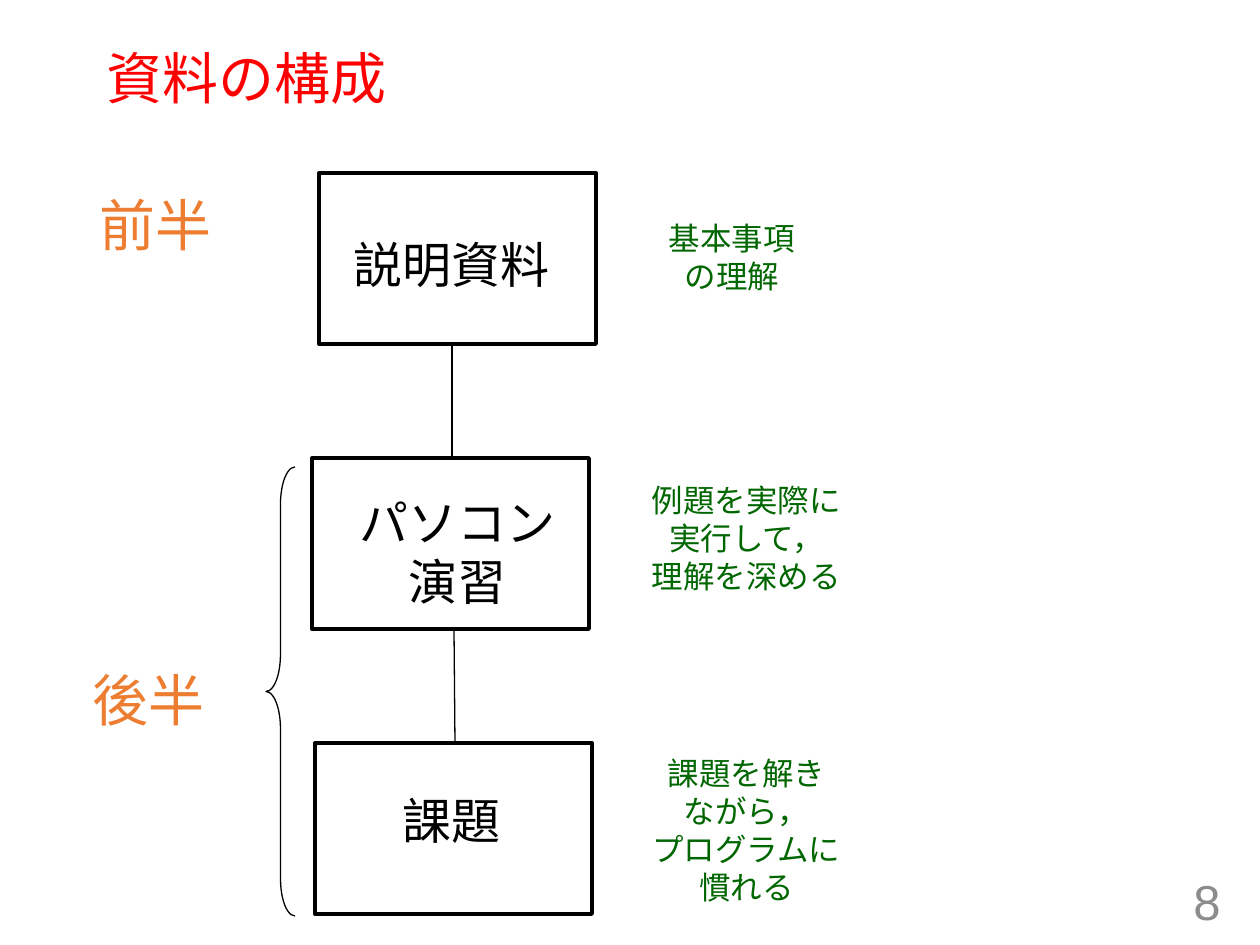
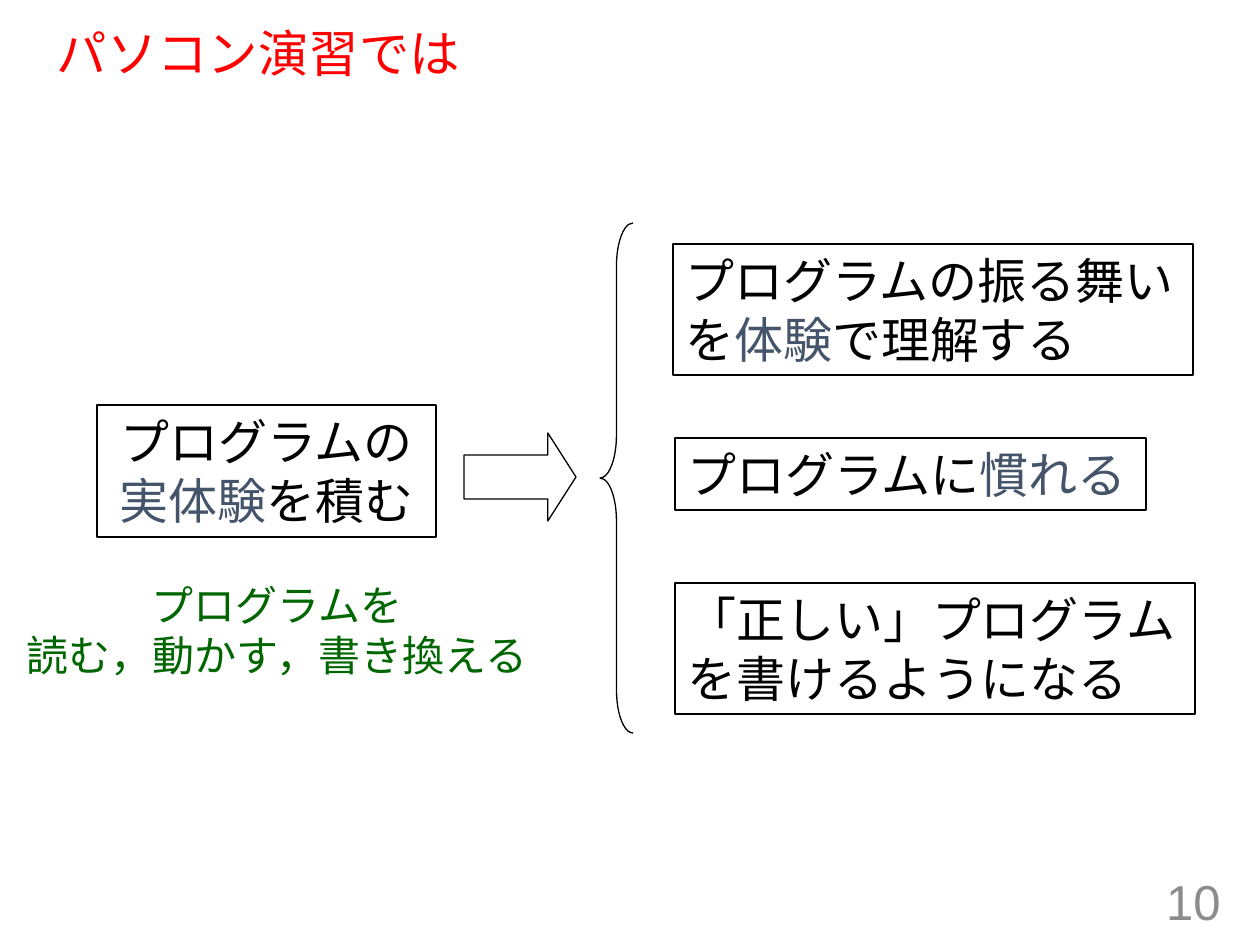
"""Build two slides on how the course material and the PC exercises are laid out."""
import dataclasses

import pptx
import pptx.dml.color
import pptx.enum.shapes
import pptx.enum.text
import pptx.oxml.ns
import pptx.util
from lxml import etree

SHAPE = pptx.enum.shapes.MSO_SHAPE
ALIGN = pptx.enum.text.PP_ALIGN
ANCHOR = pptx.enum.text.MSO_ANCHOR


@dataclasses.dataclass(frozen=True)
class Theme:
    """Hold the colours, fonts and sizes that the slides share."""
    head: str = "FF0000"
    ink: str = "000000"
    half: str = "ED7D31"
    note: str = "006600"
    key: str = "44546A"
    page: str = "8C8C8C"
    head_font: str = "Arial"
    body_font: str = "Calibri"
    big: float = 32
    mid: float = 28
    sub: float = 24
    small: float = 18
    thick: float = 2.25
    thin: float = 0.75


THEME = Theme()
PX = 126
PAGE_BOX = (949, 876, 284, 50)

PLAN = {
    "title": ("資料の構成", (94, 28, 1071, 106), THEME.big),
    "page": "8",
    "halves": [("前半", (86, 184, 139, 140)), ("後半", (79, 659, 139, 140))],
    "brace": ((266, 467, 29, 449), 1.28),
    "top": 173, "step": 285, "size": (277, 171),
    "stages": [
        {"left": 319, "name": ["説明資料"], "name_box": (340, 228, 223, 72),
         "note": ["基本事項", "の理解"], "note_box": (656, 213, 152, 89)},
        {"left": 312, "name": ["パソコン", "演習"], "name_box": (346, 486, 223, 131),
         "note": ["例題を実際に", "実行して，", "理解を深める"],
         "note_box": (638, 475, 217, 127)},
        {"left": 315, "name": ["課題"], "name_box": (389, 784, 125, 72),
         "note": ["課題を解き", "ながら，", "プログラムに", "慣れる"],
         "note_box": (638, 748, 217, 165)},
    ],
    "links": [(452, 452), (454, 455)],
}

GOALS = {
    "title": ("パソコン演習では", (44, 24, 1166, 64), 28.8),
    "page": "10",
    "brace": ((600, 223, 33, 510), 1.3),
    "arrow": (464, 433, 112, 88),
    "cause": ([["プログラムの"], [("実体験", THEME.key), "を積む"]],
              (97, 405, 339, 132)),
    "note": (["プログラムを", "読む，動かす，書き換える"], (10, 573, 534, 115)),
    "gains": [
        ([["プログラムの振る舞い"], ["を", ("体験", THEME.key), "で理解する"]],
         (673, 244, 520, 131)),
        ([["プログラムに", ("慣れる", THEME.key)]], (675, 438, 471, 72)),
        ([["「正しい」プログラム"], ["を書けるようになる"]], (675, 583, 520, 131)),
    ],
}


def emu(*px):
    """Turn px lengths into EMU."""
    return [pptx.util.Inches(n / PX) for n in px]


def rgb(code):
    """Give a colour from its hex code."""
    return pptx.dml.color.RGBColor.from_string(code)


def write(frame, lines, size, tint, font=THEME.body_font, align=ALIGN.CENTER,
          anchor=ANCHOR.TOP, wrap=False):
    """Fill a frame line by line and run by run."""
    frame.word_wrap = wrap
    frame.auto_size = pptx.enum.text.MSO_AUTO_SIZE.NONE
    frame.vertical_anchor = anchor
    for i, line in enumerate(lines):
        para = frame.add_paragraph() if i else frame.paragraphs[0]
        para.alignment = align
        for piece in [line] if isinstance(line, str) else line:
            text, shade = (piece, tint) if isinstance(piece, str) else piece
            run = para.add_run()
            run.text = text
            run.font.name = font
            run.font.size = pptx.util.Pt(size)
            run.font.color.rgb = rgb(shade)


def label(slide, box, lines, size, tint, **style):
    """Add a text box."""
    write(slide.shapes.add_textbox(*emu(*box)).text_frame, lines, size, tint, **style)


def draw(slide, kind, box, width=THEME.thin, adjust=()):
    """Add an unfilled shape with a black outline."""
    shape = slide.shapes.add_shape(kind, *emu(*box))
    shape.shadow.inherit = False
    shape.fill.background()
    shape.line.color.rgb = rgb(THEME.ink)
    shape.line.width = pptx.util.Pt(width)
    for i, value in enumerate(adjust):
        shape.adjustments[i] = value
    return shape


def link(slide, *ends):
    """Add a thin straight line."""
    line = slide.shapes.add_connector(
        pptx.enum.shapes.MSO_CONNECTOR.STRAIGHT, *emu(*ends))
    line.line.color.rgb = rgb(THEME.ink)
    line.line.width = pptx.util.Pt(THEME.thin)
    etree.SubElement(line._element.spPr, pptx.oxml.ns.qn("a:effectLst"))


def start(deck, data):
    """Add a slide with its title, brace and page number."""
    slide = deck.slides.add_slide(deck.slide_layouts[5])
    text, box, size = data["title"]
    title = slide.shapes.title
    title.left, title.top, title.width, title.height = emu(*box)
    write(title.text_frame, [text], size, THEME.head, font=THEME.head_font,
          align=ALIGN.LEFT, anchor=ANCHOR.MIDDLE, wrap=True)
    title.text_frame.paragraphs[0].line_spacing = 0.9
    label(slide, PAGE_BOX, [data["page"]], THEME.mid, THEME.page,
          font=THEME.head_font, align=ALIGN.RIGHT, anchor=ANCHOR.MIDDLE, wrap=True)
    box, curve = data["brace"]
    draw(slide, SHAPE.LEFT_BRACE, box, adjust=(curve, 0.5))
    return slide


def plan(deck):
    """Build the slide on the structure of the material."""
    slide = start(deck, PLAN)
    wide, high = PLAN["size"]
    tops = [PLAN["top"] + i * PLAN["step"] for i in range(len(PLAN["stages"]))]
    for stage, top in zip(PLAN["stages"], tops):
        draw(slide, SHAPE.RECTANGLE, (stage["left"], top, wide, high), THEME.thick)
        label(slide, stage["name_box"], stage["name"], THEME.mid, THEME.ink)
        label(slide, stage["note_box"], stage["note"], THEME.small, THEME.note)
    for (x1, x2), top, below in zip(PLAN["links"], tops, tops[1:]):
        link(slide, x1, top + high, x2, below)
    for text, box in PLAN["halves"]:
        label(slide, box, [text], THEME.big, THEME.half)


def goals(deck):
    """Build the slide on what the exercises lead to."""
    slide = start(deck, GOALS)
    draw(slide, SHAPE.RIGHT_ARROW, GOALS["arrow"], adjust=(0.5, 0.32))
    lines, box = GOALS["cause"]
    write(draw(slide, SHAPE.RECTANGLE, box).text_frame, lines, THEME.mid,
          THEME.ink, wrap=True)
    for lines, box in GOALS["gains"]:
        write(draw(slide, SHAPE.RECTANGLE, box).text_frame, lines, THEME.mid,
              THEME.ink, align=ALIGN.LEFT)
    lines, box = GOALS["note"]
    label(slide, box, lines, THEME.sub, THEME.note)


def main():
    """Build and save the deck."""
    deck = pptx.Presentation()
    deck.slide_width, deck.slide_height = emu(1260, 945)
    plan(deck)
    goals(deck)
    deck.save("out.pptx")


if __name__ == "__main__":
    main()
